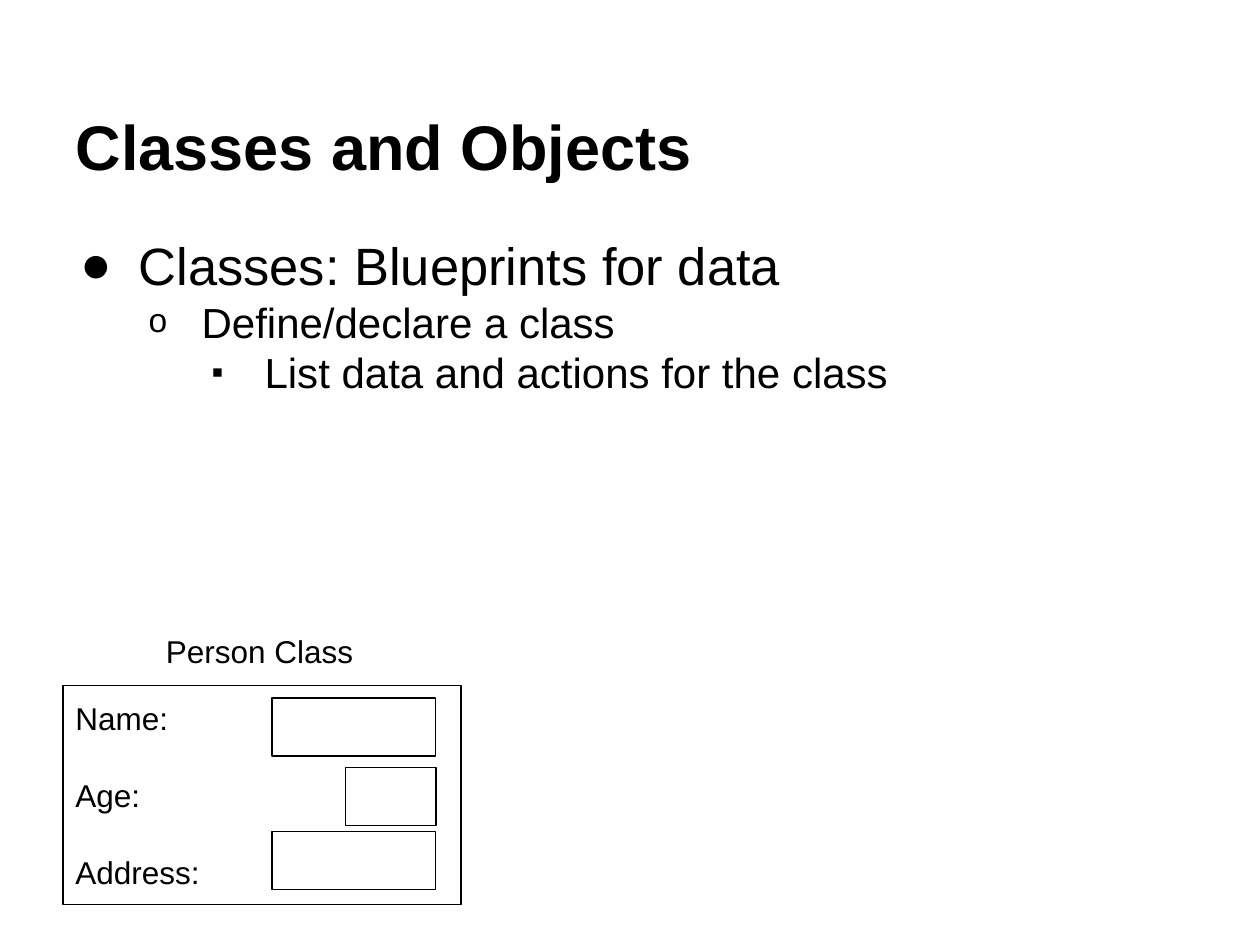
from dataclasses import dataclass

from lxml.etree import SubElement
from pptx import Presentation
from pptx.dml.color import RGBColor
from pptx.enum.shapes import MSO_SHAPE
from pptx.enum.text import MSO_ANCHOR, MSO_AUTO_SIZE, PP_ALIGN
from pptx.oxml.ns import qn
from pptx.util import Inches, Pt


@dataclass(frozen=True)
class Theme:
    """Colours, font and type sizes of the slide."""
    ink: RGBColor = RGBColor(0, 0, 0)
    paper: RGBColor = RGBColor(255, 255, 255)
    font: str = "Arial"
    title: int = 36
    lead: int = 30
    sub: int = 24
    label: int = 18
    line: float = 0.75
    inset: float = 0.1


THEME = Theme()


def place(item, box):
    """Move an item to a box of left, top, width and height in inches."""
    item.left, item.top, item.width, item.height = map(Inches, box)


def write(item, lines, sizes, bold=False, align=PP_ALIGN.LEFT,
          anchor=MSO_ANCHOR.TOP, gap=0):
    """Fill an item with lines of text and return its paragraphs."""
    frame = item.text_frame
    frame.text = "\n".join(lines)
    frame.word_wrap = True
    frame.auto_size = MSO_AUTO_SIZE.NONE
    frame.vertical_anchor = anchor
    frame.margin_left = frame.margin_right = Inches(THEME.inset)
    frame.margin_top = frame.margin_bottom = Inches(THEME.inset)
    for rank, (para, size) in enumerate(zip(frame.paragraphs, sizes)):
        para.alignment = align
        para.space_before = Pt(gap if rank else 0)
        font = para.runs[0].font
        font.name, font.size, font.bold = THEME.font, Pt(size), bold
        font.color.rgb = THEME.ink
    return frame.paragraphs


def bullet(para, level, mark, hang, scale):
    """Give a paragraph its level, hanging indent and bullet."""
    para.level = level
    props = para._p.get_or_add_pPr()
    props.set("marL", str(Inches(0.5 * (level + 1))))
    props.set("indent", str(-Inches(hang)))
    tint = SubElement(props, qn("a:buClr"))
    SubElement(tint, qn("a:srgbClr"), val=str(THEME.ink))
    SubElement(props, qn("a:buSzPct"), val=str(scale * 1000))
    SubElement(props, qn("a:buFont"), typeface=THEME.font)
    SubElement(props, qn("a:buChar"), char=mark)


def head(item, box, text):
    """Place and format the slide title."""
    place(item, box)
    write(item, [text], [THEME.title], bold=True, anchor=MSO_ANCHOR.BOTTOM)


def outline(item, box, lines):
    """Place the body list with one bullet style per level."""
    place(item, box)
    paras = write(item, lines, [THEME.lead, THEME.sub, THEME.sub])
    marks = [("●", 0.46, 100), ("o", 0.42, 80), ("▪", 0.42, 80)]
    for level, (para, mark) in enumerate(zip(paras, marks)):
        bullet(para, level, *mark)


def frame(group, box):
    """Add an outlined rectangle without fill to a group."""
    item = group.shapes.add_shape(MSO_SHAPE.RECTANGLE, *map(Inches, box))
    item.shadow.inherit = False
    item.fill.background()
    item.line.color.rgb = THEME.ink
    item.line.width = Pt(THEME.line)
    return item


def card(slide, box, name, fields):
    """Draw a class card with its name above and a slot for each field."""
    left, top, width, height = box
    group = slide.shapes.add_group_shape()
    labels = [label for label, _, _ in fields]
    write(frame(group, box), labels, [THEME.label] * len(labels),
          anchor=MSO_ANCHOR.MIDDLE, gap=22.4)
    right = left + width - 0.2
    for _, drop, wide in fields:
        frame(group, (right - wide, top + drop, wide, 0.46))
    tag = (left + 0.16, top - 0.52, width - 0.36, 0.53)
    item = group.shapes.add_textbox(*map(Inches, tag))
    write(item, [name], [THEME.label], align=PP_ALIGN.CENTER)


def main():
    """Build the slide and save it."""
    deck = Presentation()
    deck.slide_width, deck.slide_height = Inches(10), Inches(7.5)
    slide = deck.slides.add_slide(deck.slide_layouts[1])
    slide.background.fill.solid()
    slide.background.fill.fore_color.rgb = THEME.paper
    head(slide.shapes.title, (0.5, 0.3, 9, 1.25), "Classes and Objects")
    outline(slide.placeholders[1], (0.5, 1.75, 9, 5.43), [
        "Classes: Blueprints for data",
        "Define/declare a class",
        "List data and actions for the class",
    ])
    card(slide, (0.5, 5.44, 3.16, 1.74), "Person Class", [
        ("Name:", 0.1, 1.3),
        ("Age:", 0.65, 0.72),
        ("Address:", 1.16, 1.3),
    ])
    deck.save("out.pptx")


if __name__ == "__main__":
    main()
